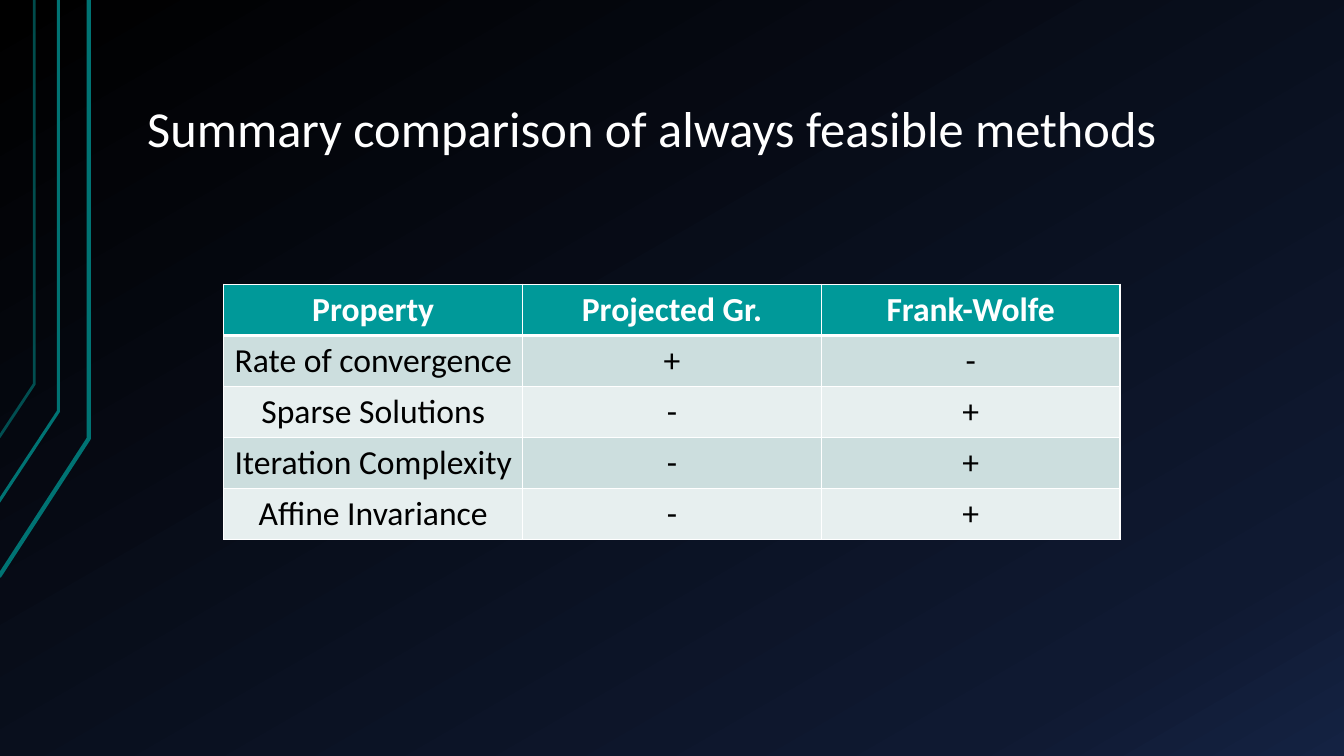
"""Build a slide that compares always feasible methods in a table."""
from copy import deepcopy

from lxml.etree import SubElement
from pptx import Presentation
from pptx.dml.color import RGBColor
from pptx.enum.text import MSO_ANCHOR, MSO_AUTO_SIZE, PP_ALIGN
from pptx.oxml.ns import qn
from pptx.util import Inches, Pt


def paint(color, hex_value):
    color.rgb = RGBColor.from_string(hex_value)


def add_border(cell, side, width):
    line = SubElement(cell._tc.get_or_add_tcPr(), qn(f"a:ln{side}"), w=str(Pt(width)))
    SubElement(SubElement(line, qn("a:solidFill")), qn("a:srgbClr"), val="FFFFFF")


presentation = Presentation()
presentation.slide_width = Inches(13.33)
presentation.slide_height = Inches(7.5)
slide = presentation.slides.add_slide(presentation.slide_layouts[5])

background = slide.background.fill
background.gradient()
background.gradient_angle = 300
stop_list = slide.element.find(f".//{qn('a:gsLst')}")
stop_list.append(deepcopy(stop_list[-1]))
gradient = [(0, "000000"), (0.85, "0F1931"), (1, "142242")]
for stop, (position, color) in zip(background.gradient_stops, gradient):
    stop.position = position
    paint(stop.color, color)

bent_lines = [
    ((-0.01, 5.72), (0.88, 4.35), 3, 100),
    ((-0.02, 4.99), (0.58, 4.08), 2.25, 100),
    ((-0.01, 4.34), (0.34, 3.81), 2, 65),
]
for start, bend, width, opacity in bent_lines:
    builder = slide.shapes.build_freeform(Inches(start[0]), Inches(start[1]))
    corners = [bend, (bend[0], 0)]
    builder.add_line_segments([(Inches(x), Inches(y)) for x, y in corners], close=False)
    shape = builder.convert_to_shape()
    shape.shadow.inherit = False
    shape.fill.background()
    shape.line.width = Pt(width)
    paint(shape.line.color, "007373")
    line_color = shape.line._ln.find(f".//{qn('a:srgbClr')}")
    SubElement(line_color, qn("a:alpha"), val=str(opacity * 1000))

title = slide.shapes.title
title.left, title.top = Inches(1.33), Inches(0.3)
title.width, title.height = Inches(11.33), Inches(1.34)
text_frame = title.text_frame
text_frame.text = "Summary comparison of always feasible methods"
text_frame.auto_size = MSO_AUTO_SIZE.NONE
text_frame.vertical_anchor = MSO_ANCHOR.BOTTOM
text_frame.margin_left = text_frame.margin_right = Inches(0.13)
text_frame.margin_top = text_frame.margin_bottom = Inches(0.07)
paragraph = text_frame.paragraphs[0]
paragraph.alignment = PP_ALIGN.LEFT
paragraph.line_spacing = 0.9
title_font = paragraph.runs[0].font
title_font.name, title_font.size = "Calibri", Pt(36)
paint(title_font.color, "FFFFFF")

rows = [
    ("Property", "Projected Gr.", "Frank-Wolfe"),
    ("Rate of convergence", "+", "-"),
    ("Sparse Solutions", "-", "+"),
    ("Iteration Complexity", "-", "+"),
    ("Affine Invariance", "-", "+"),
]
table = slide.shapes.add_table(
    len(rows), 3, Inches(2.22), Inches(2.82), Inches(8.89), Inches(2.5)
).table
for row_index, row in enumerate(rows):
    is_header = row_index == 0
    row_fill = "009999" if is_header else ("E7EFEF", "CCDEDE")[row_index % 2]
    for column_index, text in enumerate(row):
        cell = table.cell(row_index, column_index)
        for side in "LR":
            add_border(cell, side, 1)
        add_border(cell, "T", 3 if row_index == 1 else 1)
        add_border(cell, "B", 3 if is_header else 1)
        cell.fill.solid()
        paint(cell.fill.fore_color, row_fill)
        cell.text_frame.text = text
        paragraph = cell.text_frame.paragraphs[0]
        paragraph.alignment = PP_ALIGN.CENTER
        font = paragraph.runs[0].font
        font.name, font.size, font.bold = "Calibri", Pt(24), is_header
        paint(font.color, "FFFFFF" if is_header else "000000")

presentation.save("out.pptx")
